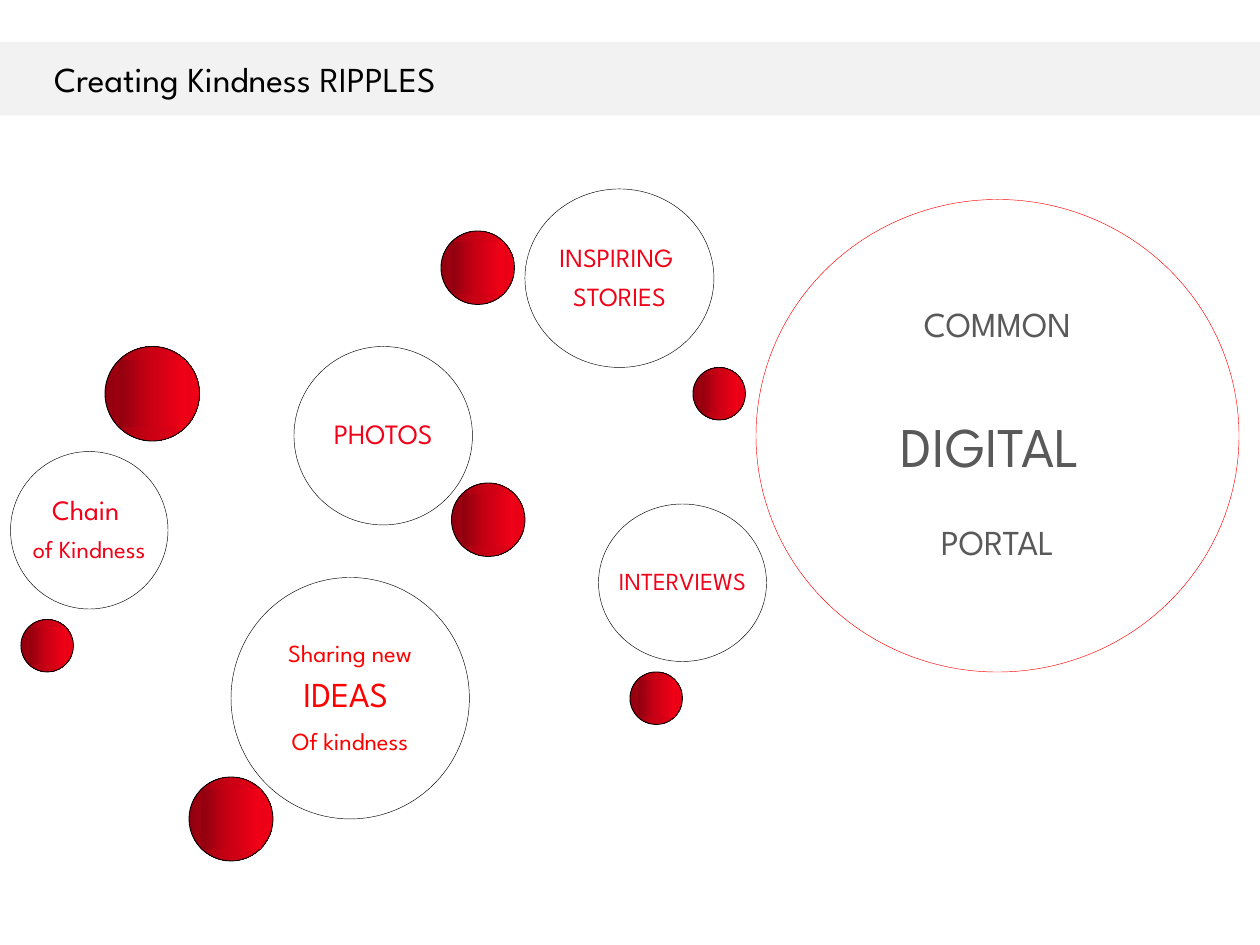
from lxml import etree
from pptx import Presentation
from pptx.dml.color import RGBColor
from pptx.enum.shapes import MSO_SHAPE as Shape
from pptx.enum.text import MSO_ANCHOR as Anchor, PP_ALIGN as Align
from pptx.oxml.ns import qn
from pptx.util import Inches, Pt

COLORS = {
    "band": "F2F2F2", "white": "FFFFFF", "black": "000000", "gray": "595959",
    "crimson": "F00219", "red": "FF0000",
}
RED_STOPS = [(0, "8F000E"), (50, "CC0014"), (100, "F20017")]
INSCRIBED = 0.146  # margin of the square that fits inside a circle


class RippleSlide:
    """Draws on a grid of 120 columns by 90 rows, 1/12 inch each."""

    font = "League Spartan"
    columns, rows = 120, 90

    def __init__(self, deck):
        self.deck = deck
        self.page = deck.slides.add_slide(deck.slide_layouts[6])

    def place(self, col, row, cols, rows):
        unit_x = self.deck.slide_width / self.columns
        unit_y = self.deck.slide_height / self.rows
        return [round(n) for n in (col * unit_x, row * unit_y, cols * unit_x, rows * unit_y)]

    def shape(self, parent, kind, area, fill=None, line=None, weight=0.25):
        shape = parent.shapes.add_shape(kind, *self.place(*area))
        shape.shadow.inherit = False
        if fill:
            shape.fill.solid()
            shape.fill.fore_color.rgb = RGBColor.from_string(COLORS[fill])
        else:
            shape.fill.background()
        if line:
            shape.line.color.rgb = RGBColor.from_string(COLORS[line])
            shape.line.width = Pt(weight)
        else:
            shape.line.fill.background()
        return shape

    def set_text(self, frame, lines, color, align=Align.CENTER, anchor=Anchor.MIDDLE):
        """Each line is (text, size, line spacing, space after)."""
        frame.word_wrap = True
        frame.vertical_anchor = anchor
        for index, (text, size, spacing, after) in enumerate(lines):
            para = frame.paragraphs[0] if index == 0 else frame.add_paragraph()
            para.text = text
            para.alignment = align
            para.line_spacing = spacing
            para.space_after = Pt(after)
            para.font.name = self.font
            para.font.size = Pt(size)
            para.font.color.rgb = RGBColor.from_string(COLORS[color])

    def title(self, text):
        band = self.shape(self.page, Shape.RECTANGLE, (0, 4, self.columns, 7), "band")
        band.text_frame.margin_left = Inches(0.43)
        self.set_text(band.text_frame, [(text, 20, 1.0, 0)], "black", Align.LEFT)

    def portal(self, area, lines):
        circle = self.shape(self.page, Shape.OVAL, area, line="red")
        circle.text_frame.margin_top = 0
        self.set_text(circle.text_frame, lines, "gray", anchor=Anchor.TOP)

    def bubble(self, area, lines, color="crimson", side=INSCRIBED):
        group = self.page.shapes.add_group_shape()
        self.shape(group, Shape.OVAL, area, "white", "black")
        col, row, cols, rows = area
        label = group.shapes.add_textbox(*self.place(
            col + cols * side, row + rows * INSCRIBED,
            cols * (1 - 2 * side), rows * (1 - 2 * INSCRIBED)))
        frame = label.text_frame
        frame.margin_left = frame.margin_right = Inches(0.03)
        frame.margin_top = frame.margin_bottom = Inches(0.03)
        self.set_text(frame, [(text, size, 0.9, 0.4 * size) for text, size in lines], color)

    def shade(self, shape):
        shape.fill.gradient()
        shape.fill.gradient_angle = 0
        stops = next(shape.element.iter(qn("a:gsLst")))
        for stop in list(stops):
            stops.remove(stop)
        for share, color in RED_STOPS:
            stop = etree.SubElement(stops, qn("a:gs"), pos=str(share * 1000))
            etree.SubElement(stop, qn("a:srgbClr"), val=color)

    def dot(self, col, row, size):
        group = self.page.shapes.add_group_shape()
        margin, inner = size * INSCRIBED, size * (1 - 2 * INSCRIBED)
        self.shade(self.shape(group, Shape.OVAL, (col, row, size, size),
                              line="black", weight=0.5))
        self.shade(self.shape(group, Shape.RECTANGLE,
                              (col + margin, row + margin, inner, inner)))


def main():
    deck = Presentation()
    deck.slide_width, deck.slide_height = Inches(10), Inches(7.5)
    slide = RippleSlide(deck)

    # Title band and the large portal circle
    slide.title("Creating Kindness RIPPLES")
    slide.portal((72, 19, 46, 45), [
        ("COMMON", 20, 1.8, 0), ("DIGITAL ", 32, 2.0, 0), ("PORTAL", 20, 2.0, 0)])

    # Labelled bubbles
    slide.bubble((28, 33, 17, 17), [("PHOTOS", 16)])
    slide.bubble((22, 55, 22.7, 23),
                 [("Sharing new", 14), ("IDEAS ", 20), ("Of kindness", 14)], "red")
    slide.bubble((50, 18, 18, 17), [("INSPIRING ", 15), ("STORIES", 15)])
    slide.bubble((1, 43, 15, 15), [("Chain ", 16), ("of Kindness", 14)], side=0.1)
    slide.bubble((57, 48, 16, 15), [("INTERVIEWS", 14)], side=0)

    # Red dots: column, row, diameter
    for dot in [(10, 33, 9), (42, 22, 7), (18, 74, 8), (43, 46, 7),
                (2, 59, 5), (66, 35, 5), (60, 64, 5)]:
        slide.dot(*dot)

    deck.save("out.pptx")


if __name__ == "__main__":
    main()
